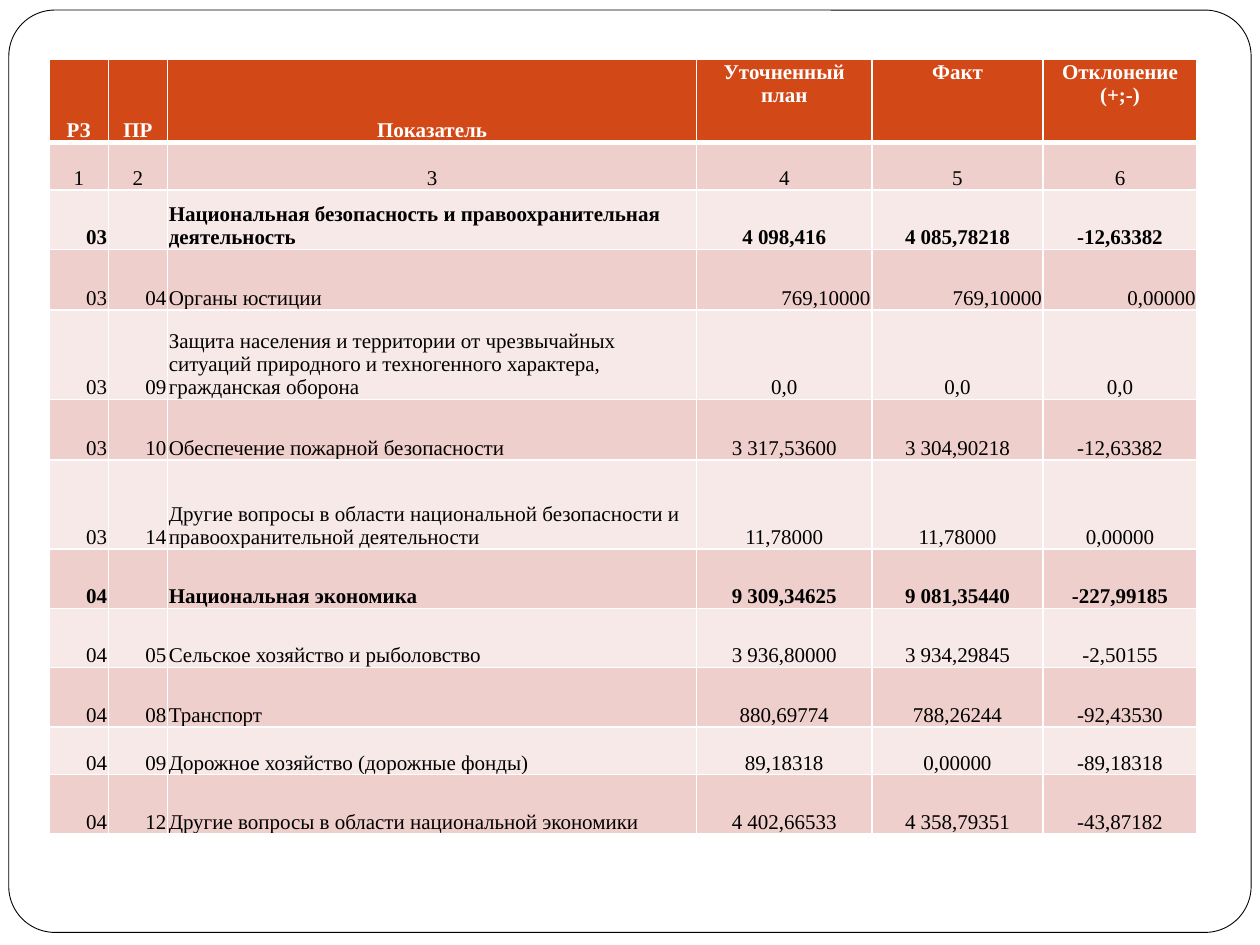
from dataclasses import dataclass

from lxml.etree import SubElement
from pptx import Presentation
from pptx.dml.color import RGBColor
from pptx.enum.shapes import MSO_SHAPE
from pptx.enum.text import MSO_ANCHOR, PP_ALIGN
from pptx.oxml.ns import qn
from pptx.util import Inches, Pt


@dataclass(frozen=True)
class Theme:
    font: str = "Times New Roman"
    size: int = 12
    white: str = "FFFFFF"
    black: str = "000000"
    header: str = "D34817"
    bands: tuple = ("EFCFCC", "F7E9E8")
    frame_line: float = 0.5
    grid_line: int = 1
    header_line: int = 3


THEME = Theme()
SLIDE_WIDTH, SLIDE_HEIGHT = 10, 7.5
FRAME = (0.07, 0.08, 9.86, 7.32)
TABLE_LEFT, TABLE_TOP = 0.39, 0.47
COLUMN_WIDTHS = [0.47, 0.47, 4.2, 1.39, 1.36, 1.22]

# Row height, then the six cells
ROWS = [
    (0.66, "РЗ", "ПР", "Показатель", "Уточненный план", "Факт", "Отклонение (+;-)"),
    (0.38, "1", "2", "3", "4", "5", "6"),
    (0.47, "03", "", "Национальная безопасность и правоохранительная деятельность",
     "4 098,416", "4 085,78218", "-12,63382"),
    (0.48, "03", "04", "Органы юстиции", "769,10000", "769,10000", "0,00000"),
    (0.71, "03", "09", "Защита населения и территории от чрезвычайных ситуаций "
     "природного и техногенного характера, гражданская оборона", "0,0", "0,0", "0,0"),
    (0.48, "03", "10", "Обеспечение пожарной безопасности",
     "3 317,53600", "3 304,90218", "-12,63382"),
    (0.71, "03", "14", "Другие вопросы в области национальной безопасности и "
     "правоохранительной деятельности", "11,78000", "11,78000", "0,00000"),
    (0.47, "04", "", "Национальная экономика",
     "9 309,34625", "9 081,35440", "-227,99185"),
    (0.47, "04", "05", "Сельское хозяйство и рыболовство",
     "3 936,80000", "3 934,29845", "-2,50155"),
    (0.47, "04", "08", "Транспорт", "880,69774", "788,26244", "-92,43530"),
    (0.38, "04", "09", "Дорожное хозяйство (дорожные фонды)",
     "89,18318", "0,00000", "-89,18318"),
    (0.47, "04", "12", "Другие вопросы в области национальной экономики",
     "4 402,66533", "4 358,79351", "-43,87182"),
]
HEADING_ROWS = 2
RIGHT_ALIGNED_ROW = 3
CODE_COLUMNS, NAME_COLUMN = 2, 2


def color(value):
    return RGBColor.from_string(value)


def alignment(row, column):
    if row < HEADING_ROWS:
        return PP_ALIGN.CENTER
    if column == NAME_COLUMN:
        return PP_ALIGN.LEFT
    if column < CODE_COLUMNS or row == RIGHT_ALIGNED_ROW:
        return PP_ALIGN.RIGHT
    return PP_ALIGN.CENTER


def add_borders(cell, row):
    properties = cell._tc.get_or_add_tcPr()
    top = THEME.header_line if row == 1 else THEME.grid_line
    bottom = THEME.header_line if row == 0 else THEME.grid_line
    widths = {"L": THEME.grid_line, "R": THEME.grid_line, "T": top, "B": bottom}
    for side, width in widths.items():
        line = SubElement(properties, qn(f"a:ln{side}"), w=str(Pt(width)))
        fill = SubElement(line, qn("a:solidFill"))
        SubElement(fill, qn("a:srgbClr"), val=THEME.white)


def style_cell(cell, row, column, bold):
    is_header = row == 0
    add_borders(cell, row)
    cell.fill.solid()
    cell.fill.fore_color.rgb = color(THEME.header if is_header else THEME.bands[(row - 1) % 2])
    cell.margin_left = cell.margin_right = cell.margin_top = Inches(0.01)
    cell.margin_bottom = 0
    at_top = is_header and column > NAME_COLUMN
    cell.vertical_anchor = MSO_ANCHOR.TOP if at_top else MSO_ANCHOR.BOTTOM
    para = cell.text_frame.paragraphs[0]
    para.alignment = alignment(row, column)
    for span in para.runs:
        span.font.name = THEME.font
        span.font.size = Pt(THEME.size)
        span.font.bold = bold
        span.font.color.rgb = color(THEME.white if is_header else THEME.black)


def add_frame(page):
    left, top, width, height = map(Inches, FRAME)
    frame = page.shapes.add_shape(MSO_SHAPE.ROUNDED_RECTANGLE, left, top, width, height)
    frame.adjustments[0] = 0.05
    frame.shadow.inherit = False
    frame.fill.solid()
    frame.fill.fore_color.rgb = color(THEME.white)
    frame.line.color.rgb = color(THEME.black)
    frame.line.width = Pt(THEME.frame_line)


def add_budget_table(page):
    table = page.shapes.add_table(
        len(ROWS), len(COLUMN_WIDTHS), Inches(TABLE_LEFT), Inches(TABLE_TOP),
        Inches(sum(COLUMN_WIDTHS)), Inches(sum(row[0] for row in ROWS))).table
    table.first_row = table.horz_banding = False
    for column, width in zip(table.columns, COLUMN_WIDTHS):
        column.width = Inches(width)
    for row, (height, *texts) in enumerate(ROWS):
        table.rows[row].height = Inches(height)
        bold = row == 0 or texts[1] == ""  # section totals have no subsection code
        for column, text in enumerate(texts):
            cell = table.cell(row, column)
            if text:
                cell.text_frame.text = text
            style_cell(cell, row, column, bold)


def main():
    deck = Presentation()
    deck.slide_width, deck.slide_height = Inches(SLIDE_WIDTH), Inches(SLIDE_HEIGHT)
    page = deck.slides.add_slide(deck.slide_layouts[6])
    add_frame(page)
    add_budget_table(page)
    deck.save("out.pptx")


if __name__ == "__main__":
    main()
